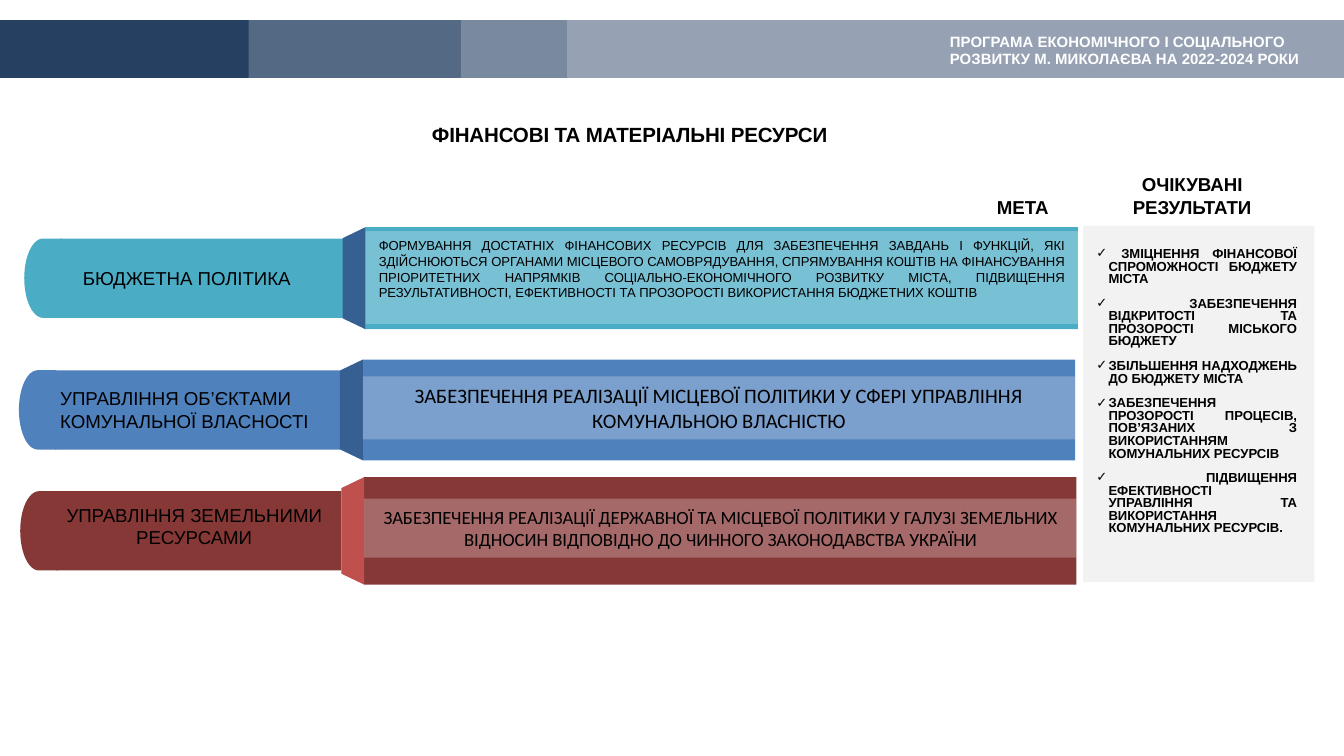
from typing import NamedTuple

from lxml.etree import SubElement
from pptx import Presentation
from pptx.dml.color import RGBColor
from pptx.enum.shapes import MSO_SHAPE as Kind
from pptx.enum.text import MSO_ANCHOR as Anchor, PP_ALIGN as Align
from pptx.oxml.ns import qn
from pptx.util import Inches, Pt

BLACK = RGBColor(0x00, 0x00, 0x00)
WHITE = RGBColor(0xFF, 0xFF, 0xFF)
GRAY = RGBColor(0xF2, 0xF2, 0xF2)
NAVY = RGBColor(0x25, 0x40, 0x61)
STEEL = RGBColor(0x37, 0x60, 0x92)
BLUE = RGBColor(0x4F, 0x81, 0xBD)
TEAL = RGBColor(0x4B, 0xAC, 0xC6)
MAROON = RGBColor(0x86, 0x38, 0x36)
RED = RGBColor(0xC0, 0x50, 0x4D)

WIDE = 10
CAP_W, TAB_W, TAB_H, FOLD_W, BAR_W = 0.27, 2.12, 0.59, 0.17, 5.3


class Box(NamedTuple):
    x: float
    y: float
    w: float
    h: float


class Style(NamedTuple):
    size: float
    font: str = "Arial"
    bold: bool = False
    align: Align = Align.LEFT
    color: RGBColor = BLACK


class Row(NamedTuple):
    mid: float
    left: float
    bar: float
    bar_h: float
    pane_y: float
    pane_h: float
    fill: RGBColor
    fold: RGBColor
    label: list[str]
    label_box: Box
    label_style: Style
    goal: str
    goal_style: Style
    anchor: Anchor = Anchor.MIDDLE


ROWS = [
    Row(2.07, 0.18, 2.72, 0.76, 1.72, 0.69, TEAL, STEEL,
        ["БЮДЖЕТНА ПОЛІТИКА"], Box(0.44, 1.94, 1.82, 0.27),
        Style(10, align=Align.RIGHT),
        "ФОРМУВАННЯ ДОСТАТНІХ ФІНАНСОВИХ РЕСУРСІВ ДЛЯ ЗАБЕЗПЕЧЕННЯ ЗАВДАНЬ "
        "І ФУНКЦІЙ, ЯКІ ЗДІЙСНЮЮТЬСЯ ОРГАНАМИ МІСЦЕВОГО САМОВРЯДУВАННЯ, "
        "СПРЯМУВАННЯ КОШТІВ НА ФІНАНСУВАННЯ ПРІОРИТЕТНИХ НАПРЯМКІВ "
        "СОЦІАЛЬНО-ЕКОНОМІЧНОГО РОЗВИТКУ МІСТА, ПІДВИЩЕННЯ РЕЗУЛЬТАТИВНОСТІ, "
        "ЕФЕКТИВНОСТІ ТА ПРОЗОРОСТІ ВИКОРИСТАННЯ БЮДЖЕТНИХ КОШТІВ",
        Style(7, align=Align.JUSTIFY), Anchor.TOP),
    Row(3.05, 0.14, 2.7, 0.75, 2.8, 0.47, BLUE, STEEL,
        ["УПРАВЛІННЯ ОБ’ЄКТАМИ", "КОМУНАЛЬНОЇ ВЛАСНОСТІ"],
        Box(0.35, 2.83, 2.2, 0.44), Style(10),
        "ЗАБЕЗПЕЧЕННЯ РЕАЛІЗАЦІЇ МІСЦЕВОЇ ПОЛІТИКИ У СФЕРІ УПРАВЛІННЯ "
        "КОМУНАЛЬНОЮ ВЛАСНІСТЮ",
        Style(11, "Calibri", align=Align.CENTER)),
    Row(3.95, 0.15, 2.71, 0.8, 3.71, 0.44, MAROON, RED,
        ["УПРАВЛІННЯ ЗЕМЕЛЬНИМИ РЕСУРСАМИ"], Box(0.33, 3.7, 2.23, 0.44),
        Style(10, align=Align.CENTER),
        "ЗАБЕЗПЕЧЕННЯ РЕАЛІЗАЦІЇ ДЕРЖАВНОЇ ТА МІСЦЕВОЇ ПОЛІТИКИ У ГАЛУЗІ "
        "ЗЕМЕЛЬНИХ ВІДНОСИН ВІДПОВІДНО ДО ЧИННОГО ЗАКОНОДАВСТВА УКРАЇНИ",
        Style(10, "Calibri", align=Align.CENTER)),
]

RESULTS = [
    " ЗМІЦНЕННЯ ФІНАНСОВОЇ СПРОМОЖНОСТІ БЮДЖЕТУ МІСТА",
    " ЗАБЕЗПЕЧЕННЯ ВІДКРИТОСТІ ТА ПРОЗОРОСТІ МІСЬКОГО БЮДЖЕТУ",
    "ЗБІЛЬШЕННЯ НАДХОДЖЕНЬ ДО БЮДЖЕТУ МІСТА",
    "ЗАБЕЗПЕЧЕННЯ ПРОЗОРОСТІ ПРОЦЕСІВ, ПОВ’ЯЗАНИХ З ВИКОРИСТАННЯМ "
    "КОМУНАЛЬНИХ РЕСУРСІВ",
    " ПІДВИЩЕННЯ ЕФЕКТИВНОСТІ УПРАВЛІННЯ ТА ВИКОРИСТАННЯ КОМУНАЛЬНИХ "
    "РЕСУРСІВ.",
]


def place(box: Box) -> list[int]:
    return [Inches(v) for v in box]


def write(shape, lines: list[str], style: Style, anchor=Anchor.TOP, wrap=True):
    frame = shape.text_frame
    frame.word_wrap = wrap
    frame.vertical_anchor = anchor
    for i, line in enumerate(lines):
        para = frame.add_paragraph() if i else frame.paragraphs[0]
        para.alignment = style.align
        run = para.add_run()
        run.text = line
        font = run.font
        font.size, font.name, font.bold = Pt(style.size), style.font, style.bold
        font.color.rgb = style.color
    return frame


def add_text(slide, box: Box, lines: list[str], style: Style, wrap=True) -> None:
    write(slide.shapes.add_textbox(*place(box)), lines, style, wrap=wrap)


def add_block(slide, box: Box, fill: RGBColor, kind=Kind.RECTANGLE,
              turn: int = 0, alpha: int = 100):
    shape = slide.shapes.add_shape(kind, *place(box))
    shape.shadow.inherit = False
    shape.line.fill.background()
    shape.fill.solid()
    shape.fill.fore_color.rgb = fill
    shape.rotation = turn
    if alpha < 100:
        color = shape.fill._xPr.find(".//" + qn("a:srgbClr"))
        SubElement(color, qn("a:alpha"), val=str(alpha * 1000))
    return shape


def add_row(slide, row: Row) -> None:
    top = row.mid - TAB_H / 2
    add_block(slide, Box(row.bar, row.mid - row.bar_h / 2, BAR_W, row.bar_h), row.fill)
    add_block(slide, Box(row.left + CAP_W, top, TAB_W, TAB_H), row.fill)
    # The fold is a trapezoid turned to face left
    fold = Box(row.bar - FOLD_W / 2 - row.bar_h / 2, row.mid - FOLD_W / 2,
               row.bar_h, FOLD_W)
    add_block(slide, fold, row.fold, Kind.TRAPEZOID, 270).adjustments[0] = 0.48
    # The cap laps over the tab so that no seam shows
    add_block(slide, Box(row.left, top, CAP_W + 0.01, TAB_H), row.fill,
              Kind.FLOWCHART_DELAY, 180)
    add_text(slide, row.label_box, row.label, row.label_style)
    pane = add_block(slide, Box(row.bar, row.pane_y, BAR_W, row.pane_h), WHITE, alpha=25)
    write(pane, [row.goal], row.goal_style, row.anchor)


def add_list(slide, box: Box, items: list[str]) -> None:
    panel = add_block(slide, box, GRAY)
    frame = write(panel, items, Style(7, bold=True, align=Align.JUSTIFY))
    frame.margin_top, frame.margin_right = Inches(0.17), Inches(0.13)
    for i, para in enumerate(frame.paragraphs):
        para.line_spacing = 0.8
        para.space_before = Pt(6.5 if i else 0)
        props = para._p.get_or_add_pPr()
        props.set("marL", str(Inches(0.09)))
        props.set("indent", str(-Inches(0.09)))
        SubElement(props, qn("a:buFont"), typeface="Arial")
        SubElement(props, qn("a:buChar"), char="✓")


def main() -> None:
    deck = Presentation()
    deck.slide_width, deck.slide_height = Inches(WIDE), Inches(WIDE * 9 / 16)
    slide = deck.slides.add_slide(deck.slide_layouts[5])

    # Title
    title = slide.shapes.title
    title.left, title.top, title.width, title.height = place(Box(2.64, 0.86, 4.09, 0.29))
    write(title, ["ФІНАНСОВІ ТА МАТЕРІАЛЬНІ РЕСУРСИ"],
          Style(11, bold=True, align=Align.CENTER))
    title.text_frame.paragraphs[0].runs[0].font._element.set("spc", "-10")

    # Policy rows
    for row in ROWS:
        add_row(slide, row)

    # Column heads and expected results
    head = Style(10, bold=True, align=Align.CENTER)
    add_text(slide, Box(7.31, 1.41, 0.6, 0.27), ["МЕТА"], head, False)
    add_text(slide, Box(8.3, 1.24, 1.14, 0.44), ["ОЧІКУВАНІ", "РЕЗУЛЬТАТИ"], head, False)
    add_list(slide, Box(8.06, 1.68, 1.72, 2.65), RESULTS)

    # Top band, lighter with each step
    add_block(slide, Box(0, 0.15, WIDE, 0.43), NAVY)
    for x in (1.85, 3.43, 4.22):
        add_block(slide, Box(x, 0.15, WIDE - x, 0.43), WHITE, alpha=22)
    add_text(slide, Box(6.97, 0.19, 3.03, 0.37),
             ["ПРОГРАМА ЕКОНОМІЧНОГО І СОЦІАЛЬНОГО РОЗВИТКУ М. МИКОЛАЄВА "
              "НА 2022-2024 РОКИ"], Style(8, bold=True, color=WHITE))

    deck.save("out.pptx")


if __name__ == "__main__":
    main()
